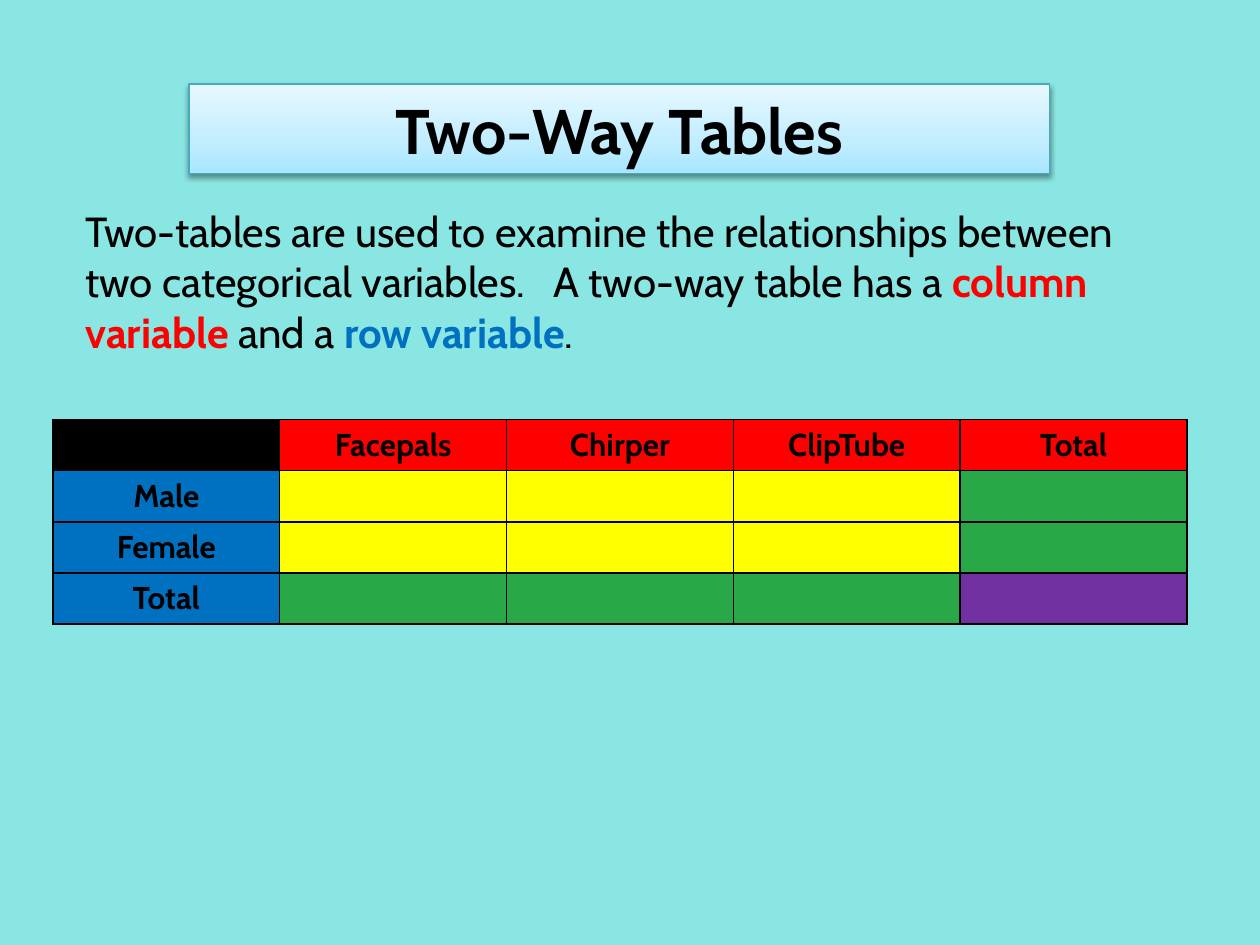
from copy import deepcopy

from lxml import etree
from pptx import Presentation
from pptx.dml.color import RGBColor
from pptx.enum.text import MSO_ANCHOR, MSO_AUTO_SIZE, PP_ALIGN
from pptx.oxml import parse_xml
from pptx.oxml.ns import qn
from pptx.util import Inches, Pt

CENTER = PP_ALIGN.CENTER
MIDDLE = MSO_ANCHOR.MIDDLE
FIXED = MSO_AUTO_SIZE.NONE
DRAWING = 'xmlns:a="http://schemas.openxmlformats.org/drawingml/2006/main"'
BLACK, RED, BLUE = "000000", "FF0000", "0070C0"
YELLOW, GREEN, PURPLE = "FFFF00", "28A846", "7030A0"


def color(value):
    return RGBColor.from_string(value)


def style(span, size, value=BLACK, bold=False):
    span.font.name = "Cabin"
    span.font.size = Pt(size)
    span.font.bold = bold
    span.font.color.rgb = color(value)


deck = Presentation()
deck.slide_width, deck.slide_height = Inches(10), Inches(7.5)
width, height = deck.slide_width, deck.slide_height
page = deck.slides.add_slide(deck.slide_layouts[5])
page.background.fill.solid()
page.background.fill.fore_color.rgb = color("8AE6E2")

columns = ["Facepals", "Chirper", "ClipTube", "Total"]
rows = ["Male", "Female", "Total"]
column_width, row_height = int(width * 0.18), int(height * 0.054)
table = page.shapes.add_table(
    len(rows) + 1, len(columns) + 1, int(width * 0.042), int(height * 0.444),
    column_width * (len(columns) + 1), row_height * (len(rows) + 1)).table
for column in table.columns:
    column.width = column_width
for row in table.rows:
    row.height = row_height

for r in range(len(rows) + 1):
    for c in range(len(columns) + 1):
        cell = table.cell(r, c)
        totals = (r == len(rows)) + (c == len(columns))
        if r == 0:
            label = columns[c - 1] if c else ""
            fill = RED if c else BLACK
        elif c == 0:
            label, fill = rows[r - 1], BLUE
        else:
            label, fill = "", [YELLOW, GREEN, PURPLE][totals]
        properties = cell._tc.get_or_add_tcPr()
        for side in ("lnL", "lnR", "lnT", "lnB"):
            properties.append(parse_xml(
                f'<a:{side} {DRAWING} w="12700"><a:solidFill>'
                f'<a:srgbClr val="{BLACK}"/></a:solidFill></a:{side}>'))
        cell.fill.solid()
        cell.fill.fore_color.rgb = color(fill)
        cell.vertical_anchor = MIDDLE
        para = cell.text_frame.paragraphs[0]
        para.alignment = CENTER
        para.font.size = Pt(18)
        if label:
            para.text = label
            style(para.runs[0], 18, bold=True)

box = page.shapes.add_textbox(
    int(width * 0.058), int(height * 0.211), int(width * 0.85), int(height * 0.175))
box.text_frame.word_wrap = True
para = box.text_frame.paragraphs[0]
for words, value, bold in [
    ("Two-tables are used to examine the relationships between two "
     "categorical variables.   A two-way table has a ", BLACK, False),
    ("column variable ", RED, True),
    ("and a ", BLACK, False),
    ("row variable", BLUE, True),
    (".", BLACK, False),
]:
    span = para.add_run()
    span.text = words
    style(span, 24, value, bold)

title = page.shapes.title
title.left, title.top = int(width * 0.15), int(height * 0.089)
title.width, title.height = int(width * 0.683), int(height * 0.095)
title.text_frame.text = "Two-Way Tables"
title.text_frame.auto_size = FIXED
title.text_frame.vertical_anchor = MIDDLE
para = title.text_frame.paragraphs[0]
para.alignment = CENTER
style(para.runs[0], 36, bold=True)

title.fill.gradient()
title.fill.gradient_angle = 90
stop_list = title._element.spPr.find(qn("a:gradFill")).find(qn("a:gsLst"))
stop_list.append(deepcopy(stop_list[-1]))
for stop, position, value in zip(
        title.fill.gradient_stops, (0, 0.35, 1), ("A7E6FF", "C1EDFF", "E7F8FF")):
    stop.position = position
    stop.color.rgb = color(value)
title.line.color.rgb = color("46AAC5")
title.line.width = Pt(0.75)

title.shadow.inherit = False
effects = title._element.spPr.find(qn("a:effectLst"))
shadow = etree.SubElement(
    effects, qn("a:outerShdw"), blurRad=str(Pt(3.1)), dist=str(Pt(1.6)),
    dir="5400000", rotWithShape="0")
shade = etree.SubElement(shadow, qn("a:srgbClr"), val=BLACK)
etree.SubElement(shade, qn("a:alpha"), val="38000")

deck.save("out.pptx")
